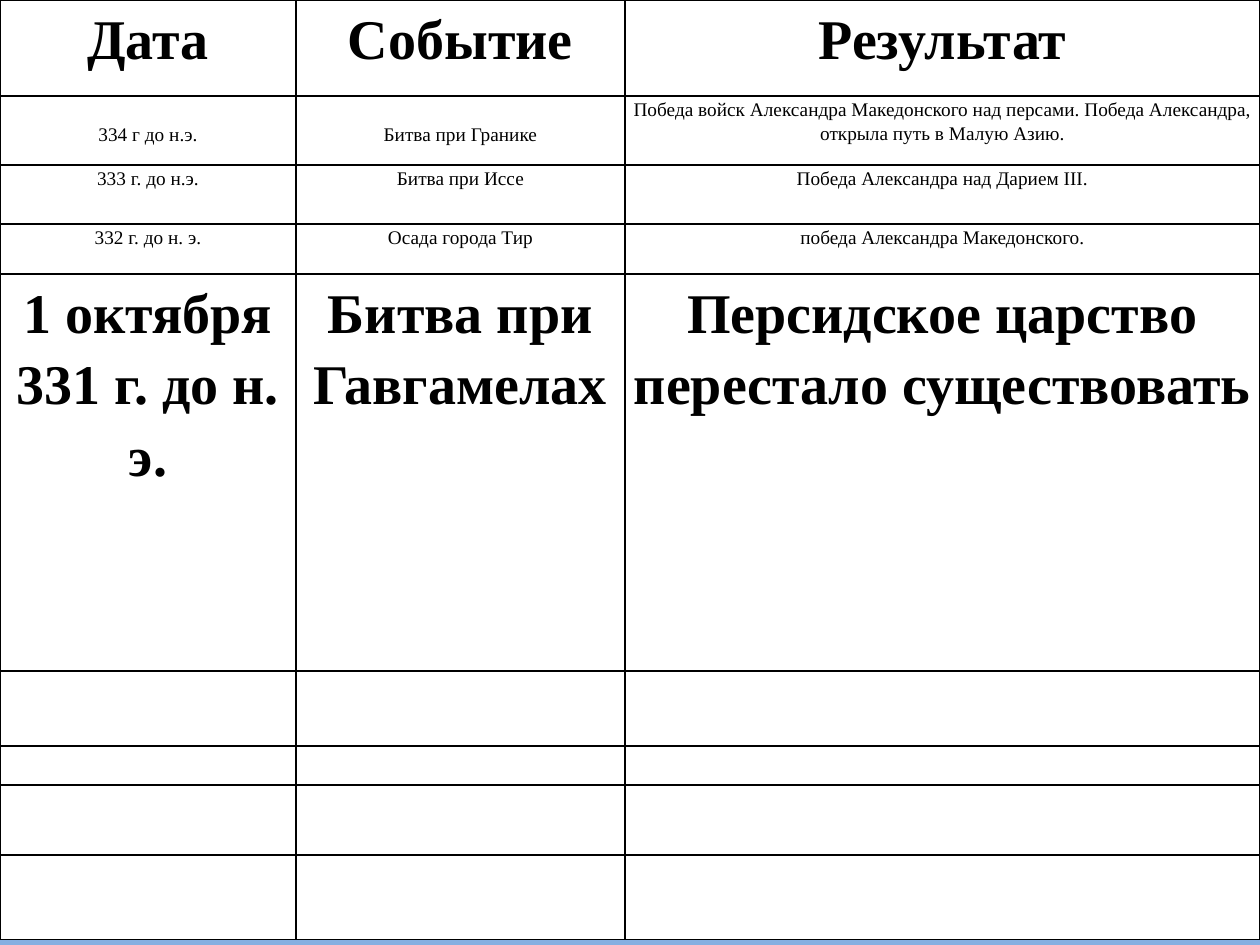
from dataclasses import dataclass

from lxml import etree
from pptx import Presentation
from pptx.dml.color import RGBColor
from pptx.enum.text import PP_ALIGN
from pptx.oxml.ns import qn
from pptx.util import Emu, Pt

CENTER = PP_ALIGN.CENTER
EMU_PER_PX = 914400 // 126
BLANK_LAYOUT = 6


@dataclass(frozen=True)
class Theme:
    font: str = "Times New Roman"
    ink: str = "000000"
    cell: str = "FFFFFF"
    background: str = "86AFE1"
    large: int = 32
    small: int = 11
    line_spacing: float = 1.15
    border: int = 1


THEME = Theme()
SLIDE_SIZE = (1260, 945)
TABLE_BOX = (0, 0, 1260, 940)
COLUMN_WIDTHS = (296, 329, 635)
ROW_HEIGHTS = (96, 69, 59, 50, 397, 75, 39, 70, 85)
LARGE_ROWS = (0, 4)
LOWERED_CELLS = ((1, 0), (1, 1))
LOWERED_BY = 25
BATTLES = (
    ("Дата", "Событие", "Результат"),
    ("334 г до н.э.", "Битва при Гранике",
     "Победа войск Александра Македонского над персами. "
     "Победа Александра, открыла путь в Малую Азию."),
    ("333 г. до н.э.", "Битва при Иссе", "Победа Александра над Дарием III."),
    ("332 г. до н. э.", "Осада города Тир", "победа Александра Македонского."),
    ("1 октября 331 г. до н. э.", "Битва при Гавгамелах",
     "Персидское царство перестало существовать"),
)


def px(length):
    return Emu(length * EMU_PER_PX)


def color(value):
    return RGBColor.from_string(value)


def add_borders(cell):
    """Put the four border lines ahead of the fill, as the schema requires."""
    properties = cell._tc.get_or_add_tcPr()
    for position, side in enumerate(("a:lnL", "a:lnR", "a:lnT", "a:lnB")):
        line = etree.Element(qn(side), w=str(Pt(THEME.border)))
        fill = etree.SubElement(line, qn("a:solidFill"))
        etree.SubElement(fill, qn("a:srgbClr"), val=THEME.ink)
        properties.insert(position, line)


def format_cell(cell):
    cell.margin_left = cell.margin_right = 0
    cell.margin_top = cell.margin_bottom = 0
    cell.fill.solid()
    cell.fill.fore_color.rgb = color(THEME.cell)
    add_borders(cell)


def write_cell(cell, text, large):
    paragraph = cell.text_frame.paragraphs[0]
    paragraph.text = text
    paragraph.alignment = CENTER
    paragraph.line_spacing = THEME.line_spacing
    for run in paragraph.runs:
        run.font.name = THEME.font
        run.font.size = Pt(THEME.large if large else THEME.small)
        run.font.bold = large
        run.font.color.rgb = color(THEME.ink)


def add_battle_table(slide, box):
    shape = slide.shapes.add_table(
        len(ROW_HEIGHTS), len(COLUMN_WIDTHS), *map(px, box))
    table = shape.table
    table.first_row = table.horz_banding = False
    for column, width in zip(table.columns, COLUMN_WIDTHS):
        column.width = px(width)
    for row, height in zip(table.rows, ROW_HEIGHTS):
        row.height = px(height)
    for cell in table.iter_cells():
        format_cell(cell)
    for row_index, texts in enumerate(BATTLES):
        for column_index, text in enumerate(texts):
            write_cell(table.cell(row_index, column_index), text,
                       row_index in LARGE_ROWS)
    for position in LOWERED_CELLS:
        table.cell(*position).margin_top = px(LOWERED_BY)


def main():
    presentation = Presentation()
    presentation.slide_width, presentation.slide_height = map(px, SLIDE_SIZE)
    slide = presentation.slides.add_slide(
        presentation.slide_layouts[BLANK_LAYOUT])
    slide.background.fill.solid()
    slide.background.fill.fore_color.rgb = color(THEME.background)
    add_battle_table(slide, TABLE_BOX)
    presentation.save("out.pptx")


if __name__ == "__main__":
    main()
